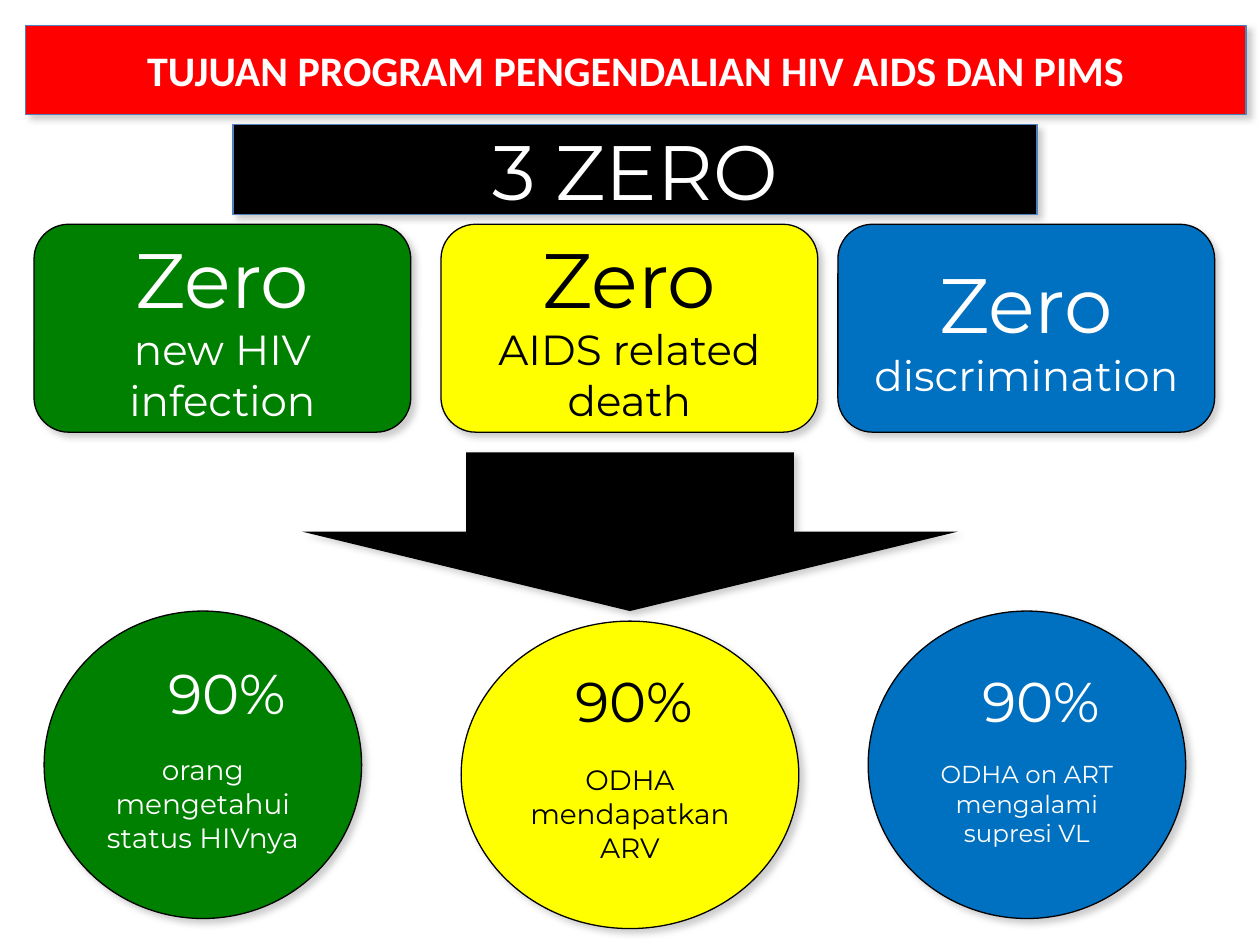
from dataclasses import dataclass
from typing import Optional

from lxml.etree import SubElement
from pptx import Presentation
from pptx.dml.color import RGBColor
from pptx.enum.shapes import MSO_SHAPE
from pptx.enum.text import MSO_ANCHOR, MSO_AUTO_SIZE, PP_ALIGN
from pptx.oxml.ns import qn
from pptx.util import Inches, Pt

COLS, ROWS = 100, 75
GREEN, YELLOW, BLUE = "008000", "FFFF00", "0070C0"
BLACK, WHITE, RED, EDGE = "000000", "FFFFFF", "FF0000", "4F81BD"

prs = Presentation()
prs.slide_width, prs.slide_height = Inches(10), Inches(7.5)
s = prs.slides.add_slide(prs.slide_layouts[6])


@dataclass
class Box:
    col: float
    row: float
    cols: float
    rows: float

    def emu(self) -> tuple:
        w, h = prs.slide_width / COLS, prs.slide_height / ROWS
        return tuple(round(v) for v in
                     (self.col * w, self.row * h, self.cols * w, self.rows * h))


@dataclass
class Goal:
    fill: str
    ink: str
    card_col: float
    zero: str
    circle: Box
    target: str
    size: int
    percent: Box


def rgb(value: str) -> RGBColor:
    return RGBColor.from_string(value)


def add_shadow(sp) -> None:
    sp.shadow.inherit = False
    effects = sp._element.spPr.find(qn("a:effectLst"))
    shadow = SubElement(effects, qn("a:outerShdw"), blurRad=str(Pt(4)),
                        dist=str(Pt(3)), dir="2700000", algn="ctr", rotWithShape="0")
    color = SubElement(shadow, qn("a:srgbClr"), val="808080")
    SubElement(color, qn("a:alpha"), val="40000")


def add_shape(kind, box: Box, fill: str, line: Optional[str] = BLACK):
    sp = s.shapes.add_shape(kind, *box.emu())
    sp.fill.solid()
    sp.fill.fore_color.rgb = rgb(fill)
    if line:
        sp.line.color.rgb = rgb(line)
        sp.line.width = Pt(0.75)
    else:
        sp.line.fill.background()
    add_shadow(sp)
    sp.text_frame.word_wrap = True
    sp.text_frame.vertical_anchor = MSO_ANCHOR.MIDDLE
    return sp


def add_text(tf, text: str, *, size: int, color: str, font: str = "Montserrat",
             bold: bool = False) -> None:
    p = tf.add_paragraph() if tf.text else tf.paragraphs[0]
    p.alignment = PP_ALIGN.CENTER
    r = p.add_run()
    r.text = text
    r.font.name, r.font.size, r.font.bold = font, Pt(size), bold
    r.font.color.rgb = rgb(color)


def add_card(goal: Goal) -> None:
    sp = add_shape(MSO_SHAPE.ROUNDED_RECTANGLE,
                   Box(goal.card_col, 17.8, 29.9, 16.5), goal.fill)
    add_text(sp.text_frame, "Zero", size=44, color=goal.ink)
    add_text(sp.text_frame, goal.zero, size=24, color=goal.ink)


def add_circle(goal: Goal) -> None:
    sp = add_shape(MSO_SHAPE.OVAL, goal.circle, goal.fill)
    sp.text_frame.margin_top = Inches(0.66)
    add_text(sp.text_frame, goal.target, size=goal.size, color=goal.ink)


def add_percent(goal: Goal) -> None:
    tf = s.shapes.add_textbox(*goal.percent.emu()).text_frame
    tf.word_wrap = True
    tf.auto_size = MSO_AUTO_SIZE.SHAPE_TO_FIT_TEXT
    add_text(tf, "90%", size=32, color=goal.ink)


def add_banner(box: Box, fill: str, text: str, **style) -> None:
    sp = add_shape(MSO_SHAPE.RECTANGLE, box, fill, EDGE)
    add_text(sp.text_frame, text, color=WHITE, **style)


GOALS = [
    Goal(GREEN, WHITE, 2.7, "new HIV infection", Box(3.5, 48.5, 25.2, 24.4),
         "orang mengetahui status HIVnya", 16, Box(9, 51.8, 18.1, 6.4)),
    Goal(YELLOW, BLACK, 35, "AIDS related death", Box(36.6, 49.3, 26.8, 24.4),
         "ODHA mendapatkan ARV", 16, Box(41.3, 52.4, 18.1, 6.4)),
    Goal(BLUE, WHITE, 66.5, "discrimination", Box(68.9, 48.5, 25.2, 24.4),
         "ODHA on ART mengalami supresi VL", 14, Box(73.6, 52.4, 18.1, 6.4)),
]

for goal in GOALS:
    add_card(goal)
    add_circle(goal)
    add_percent(goal)

add_shape(MSO_SHAPE.DOWN_ARROW, Box(24, 35.9, 52, 12.6), BLACK, None)
add_banner(Box(18.5, 9.9, 63.8, 7.1), BLACK, "3 ZERO", size=44)
add_banner(Box(2, 2, 96.9, 7.1), RED, "TUJUAN PROGRAM PENGENDALIAN HIV AIDS DAN PIMS",
           size=24, font="Calibri", bold=True)

prs.save("out.pptx")
